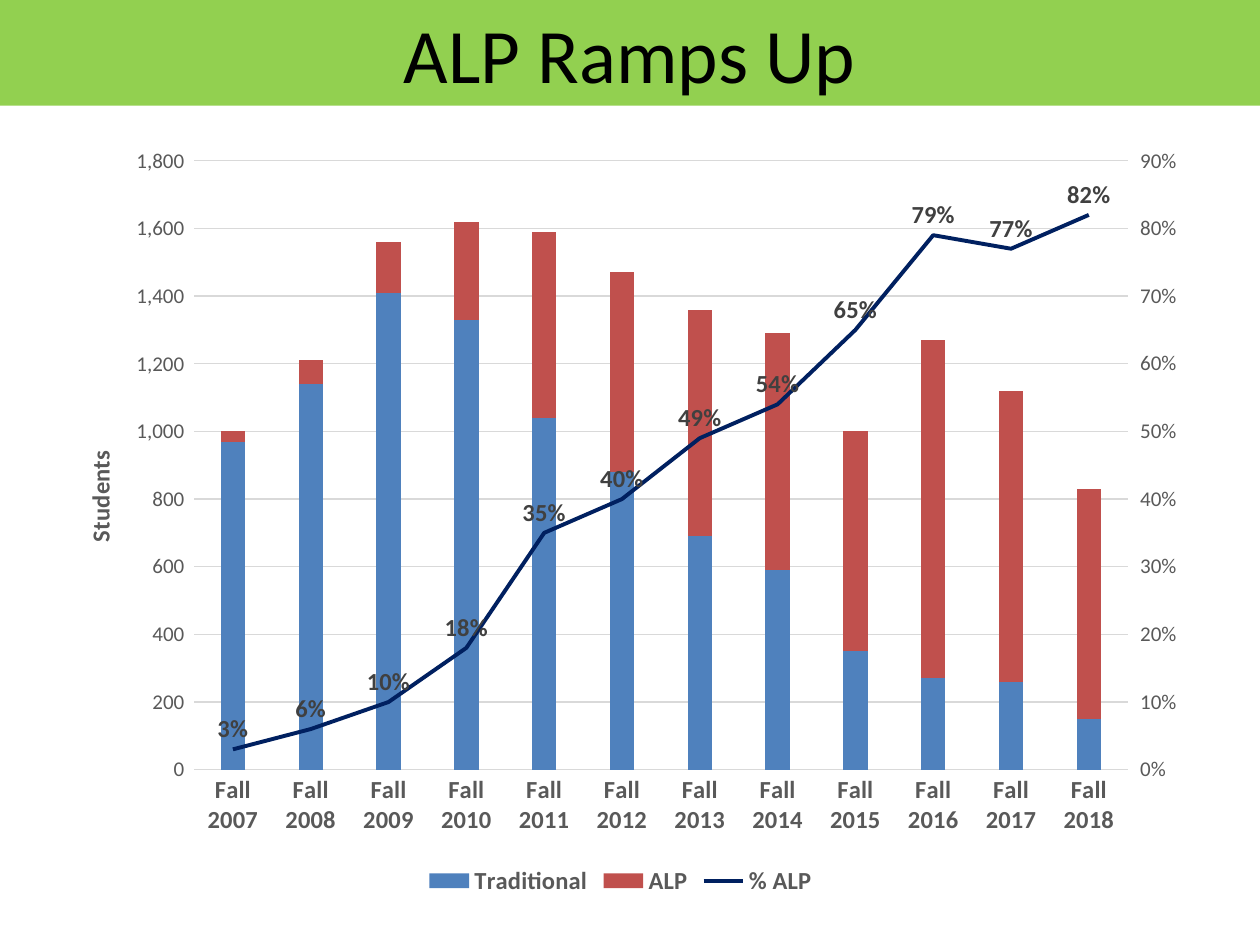
import dataclasses
import typing

import pptx
import pptx.chart.axis
import pptx.chart.data
import pptx.dml.color
import pptx.enum.chart
import pptx.enum.shapes
import pptx.enum.text
import pptx.oxml
import pptx.oxml.ns
import pptx.util

FONT = "Calibri"
COLORS = {
    "banner": "92D050",
    "title": "000000",
    "traditional": "4F81BD",
    "alp": "C0504D",
    "share": "002060",
    "grid": "D9D9D9",
    "text": "595959",
    "label": "404040",
}
COUNT_FORMAT = r"#,##0_);[Red]\(#,##0\)"
NS = pptx.oxml.ns.nsdecls("c")
LINE_XML = (
    f'<c:lineChart {NS}><c:grouping val="standard"/><c:varyColors val="0"/>'
    '<c:marker val="1"/><c:axId val="5001"/><c:axId val="5002"/></c:lineChart>'
)
HIDDEN_AXIS_XML = (
    f'<c:catAx {NS}><c:axId val="5001"/><c:scaling><c:orientation val="minMax"/></c:scaling>'
    '<c:delete val="1"/><c:axPos val="b"/><c:crossAx val="5002"/>'
    '<c:crosses val="autoZero"/></c:catAx>'
)
RIGHT_AXIS_XML = (
    f'<c:valAx {NS}><c:axId val="5002"/><c:scaling><c:orientation val="minMax"/></c:scaling>'
    '<c:delete val="0"/><c:axPos val="r"/><c:crossAx val="5001"/>'
    '<c:crosses val="max"/><c:crossBetween val="between"/></c:valAx>'
)


@dataclasses.dataclass
class Series:
    name: str
    color: str
    number_format: str
    values: list[float]


SERIES = [
    Series("Traditional", "traditional", "#,##0",
           [970, 1140, 1410, 1330, 1040, 880, 690, 590, 350, 270, 260, 150]),
    Series("ALP", "alp", "#,##0",
           [30, 70, 150, 290, 550, 590, 670, 700, 650, 1000, 860, 680]),
    Series("% ALP", "share", "0%",
           [0.03, 0.06, 0.1, 0.18, 0.35, 0.4, 0.49, 0.54, 0.65, 0.79, 0.77, 0.82]),
]


def rgb(name: str) -> pptx.dml.color.RGBColor:
    return pptx.dml.color.RGBColor.from_string(COLORS[name])


def set_font(font: typing.Any, size: float, color: str, bold: bool = False) -> None:
    font.name = FONT
    font.size = pptx.util.Pt(size)
    font.bold = bold
    font.color.rgb = rgb(color)


def set_line(line: typing.Any, color: str, width: float) -> None:
    line.color.rgb = rgb(color)
    line.width = pptx.util.Pt(width)


def layout(x: float, y: float, size: tuple[float, float] | None = None) -> typing.Any:
    parts = [("xMode", "edge"), ("yMode", "edge"), ("x", x), ("y", y)]
    if size:
        parts = [("layoutTarget", "inner"), *parts, ("w", size[0]), ("h", size[1])]
    body = "".join(f'<c:{tag} val="{value}"/>' for tag, value in parts)
    return pptx.oxml.parse_xml(
        f"<c:layout {NS}><c:manualLayout>{body}</c:manualLayout></c:layout>")


def remove_children(parent: typing.Any, tag: str) -> None:
    for child in parent.findall(pptx.oxml.ns.qn(tag)):
        parent.remove(child)


def style_value_axis(axis: typing.Any, top: float, step: float, number_format: str) -> None:
    axis.minimum_scale = 0
    axis.maximum_scale = top
    axis.major_unit = step
    axis.tick_labels.number_format = number_format
    axis.tick_labels.number_format_is_linked = False
    set_font(axis.tick_labels.font, 12, "text")
    axis.format.line.fill.background()


def add_banner(slide: typing.Any, text: str) -> None:
    s = slide.shapes.add_shape(
        pptx.enum.shapes.MSO_SHAPE.RECTANGLE, 0, 0,
        pptx.util.Cm(25.4), pptx.util.Cm(2.13))
    s.shadow.inherit = False
    s.fill.solid()
    s.fill.fore_color.rgb = rgb("banner")
    s.line.fill.background()
    tf = s.text_frame
    tf.vertical_anchor = pptx.enum.text.MSO_ANCHOR.MIDDLE
    p = tf.paragraphs[0]
    p.alignment = pptx.enum.text.PP_ALIGN.CENTER
    r = p.add_run()
    r.text = text
    set_font(r.font, 44, "title")


def move_to_right_axis(chart: typing.Any, series: typing.Any) -> None:
    bar_chart = chart.plots[0]._element
    plot_area = bar_chart.getparent()
    ser = series._element
    remove_children(ser, "c:invertIfNegative")
    line_chart = pptx.oxml.parse_xml(LINE_XML)
    line_chart.insert(2, ser)
    bar_chart.addnext(line_chart)
    right = pptx.oxml.parse_xml(RIGHT_AXIS_XML)
    chart.value_axis._element.addnext(right)
    right.addnext(pptx.oxml.parse_xml(HIDDEN_AXIS_XML))
    axis = pptx.chart.axis.ValueAxis(right)
    axis.major_tick_mark = pptx.enum.chart.XL_TICK_MARK.OUTSIDE
    axis.minor_tick_mark = pptx.enum.chart.XL_TICK_MARK.NONE
    style_value_axis(axis, 0.9, 0.1, "0%")
    remove_children(plot_area, "c:layout")
    plot_area.insert(0, layout(0.13, 0.04, (0.81, 0.79)))


def style_share_line(series: typing.Any) -> None:
    series.smooth = False
    series.marker.style = pptx.enum.chart.XL_MARKER_STYLE.NONE
    set_line(series.format.line, "share", 2.25)
    labels = series.data_labels
    labels.show_value = True
    labels.position = pptx.enum.chart.XL_LABEL_POSITION.ABOVE
    labels.number_format = "0%"
    labels.number_format_is_linked = False
    set_font(labels.font, 14, "label", True)


def add_enrollment_chart(slide: typing.Any) -> None:
    data = pptx.chart.data.CategoryChartData()
    data.categories = [f"Fall {year}" for year in range(2007, 2019)]
    for item in SERIES:
        data.add_series(item.name, item.values, item.number_format)
    chart = slide.shapes.add_chart(
        pptx.enum.chart.XL_CHART_TYPE.COLUMN_STACKED,
        pptx.util.Cm(0.89), pptx.util.Cm(2.62),
        pptx.util.Cm(23.24), pptx.util.Cm(15.54), data).chart
    chart.has_title = False
    set_font(chart.font, 10, "title")
    chart.has_legend = True
    chart.legend.position = pptx.enum.chart.XL_LEGEND_POSITION.BOTTOM
    chart.legend.include_in_layout = False
    set_font(chart.legend.font, 14, "text", True)

    bars = chart.plots[0]
    bars.vary_by_categories = False
    bars.gap_width = 219
    bars.overlap = 100
    for series, item in zip(bars.series, SERIES[:2]):
        series.format.fill.solid()
        series.format.fill.fore_color.rgb = rgb(item.color)

    terms = chart.category_axis
    students = chart.value_axis
    for axis in (terms, students):
        axis.major_tick_mark = pptx.enum.chart.XL_TICK_MARK.NONE
    set_font(terms.tick_labels.font, 14, "text", True)
    set_line(terms.format.line, "grid", 0.75)
    style_value_axis(students, 1800, 200, COUNT_FORMAT)
    set_line(students.major_gridlines.format.line, "grid", 0.75)
    r = students.axis_title.text_frame.paragraphs[0].add_run()
    r.text = "Students"
    set_font(r.font, 14, "text", True)
    title = students.axis_title._element
    remove_children(title, "c:layout")
    title.find(pptx.oxml.ns.qn("c:tx")).addnext(layout(0.03, 0.41))

    move_to_right_axis(chart, bars.series[2])
    style_share_line(chart.plots[1].series[0])


def main() -> None:
    prs = pptx.Presentation()
    prs.slide_width = pptx.util.Cm(25.4)
    prs.slide_height = pptx.util.Cm(19.05)
    slide = prs.slides.add_slide(prs.slide_layouts[6])
    add_banner(slide, "ALP Ramps Up")
    add_enrollment_chart(slide)
    prs.save("out.pptx")


if __name__ == "__main__":
    main()
